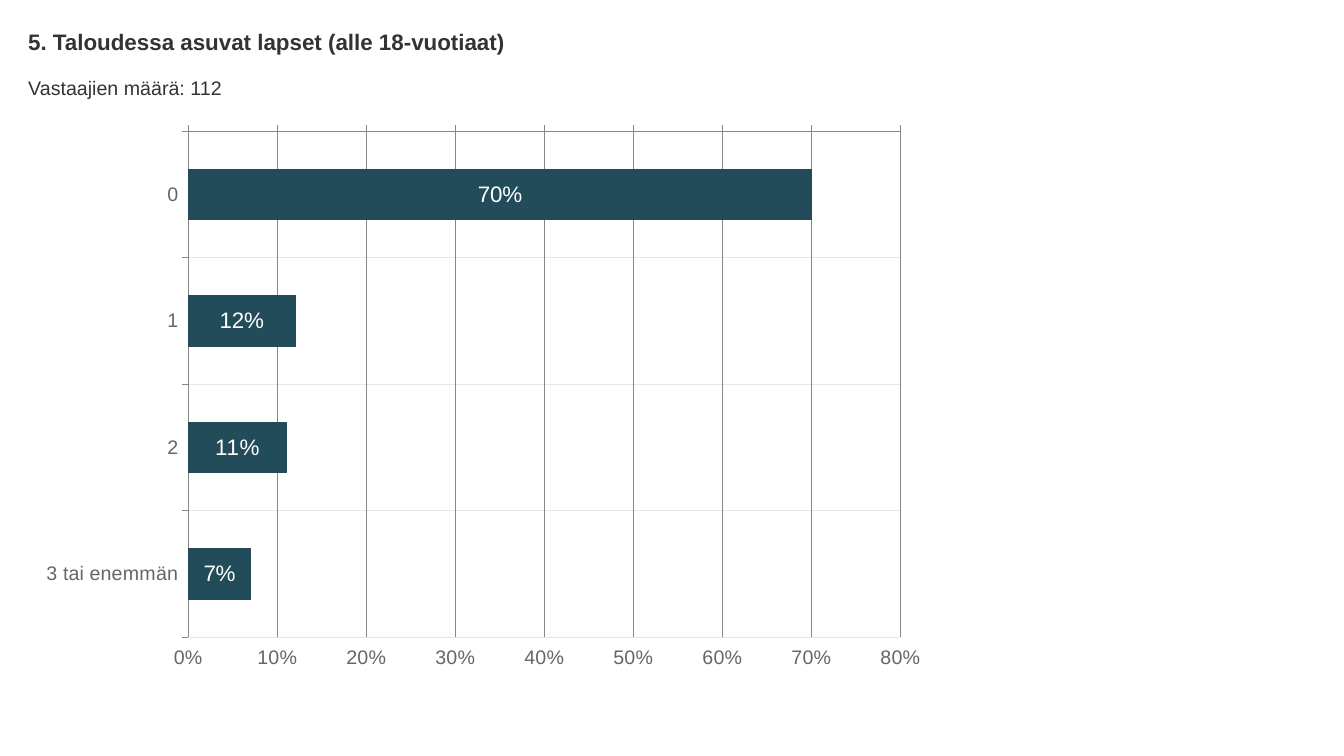
from dataclasses import dataclass

from pptx import Presentation
from pptx import util as u
from pptx.chart import data as chart_data
from pptx.dml.color import RGBColor
from pptx.enum import chart as ch
from pptx.enum import text

WIDTH, HEIGHT = u.Inches(13.33), u.Inches(7.5)
FONT = "Arial"
INK = RGBColor(0x33, 0x33, 0x33)
AXIS_TEXT = RGBColor(0x66, 0x66, 0x66)
AXIS_LINE = RGBColor(0x86, 0x86, 0x86)
ROW_LINE = RGBColor(0xE6, 0xE6, 0xE6)
BAR = RGBColor(0x23, 0x4C, 0x5A)
WHITE = RGBColor(0xFF, 0xFF, 0xFF)

SHARES = {"0": 0.70, "1": 0.12, "2": 0.11, "3 tai enemmän": 0.07}


@dataclass(frozen=True)
class Box:
    """A rectangle in percent of the slide's width and height."""
    left: float
    top: float
    width: float
    height: float

    def emu(self) -> tuple[int, int, int, int]:
        return (int(WIDTH * self.left / 100), int(HEIGHT * self.top / 100),
                int(WIDTH * self.width / 100), int(HEIGHT * self.height / 100))


@dataclass(frozen=True)
class Heading:
    words: str
    box: Box
    size: int
    bold: bool


HEADINGS = [
    Heading("5. Taloudessa asuvat lapset (alle 18-vuotiaat)",
            Box(2.1, 3.73, 95.87, 3.6), 16, True),
    Heading("Vastaajien määrä: 112", Box(2.1, 10, 95.87, 3.07), 14, False),
]
CHART_BOX = Box(2.1, 15.87, 67.74, 74.13)


def style_font(font, size: int, color: RGBColor, bold: bool = False) -> None:
    font.name, font.size, font.bold = FONT, u.Pt(size), bold
    font.color.rgb = color


def style_line(line, color: RGBColor) -> None:
    line.color.rgb = color
    line.width = u.Pt(0.75)


def add_heading(slide, heading: Heading) -> None:
    tf = slide.shapes.add_textbox(*heading.box.emu()).text_frame
    tf.word_wrap = True
    tf.auto_size = text.MSO_AUTO_SIZE.SHAPE_TO_FIT_TEXT
    tf.margin_left = tf.margin_top = tf.margin_right = tf.margin_bottom = 0
    r = tf.paragraphs[0].add_run()
    r.text = heading.words
    style_font(r.font, heading.size, INK, heading.bold)


def style_axis(axis, labels: ch.XL_TICK_LABEL_POSITION, grid: RGBColor) -> None:
    axis.has_major_gridlines = True
    style_line(axis.major_gridlines.format.line, grid)
    style_line(axis.format.line, AXIS_LINE)
    axis.major_tick_mark = ch.XL_TICK_MARK.OUTSIDE
    axis.minor_tick_mark = ch.XL_TICK_MARK.NONE
    axis.tick_label_position = labels
    style_font(axis.tick_labels.font, 14, AXIS_TEXT)


def add_share_chart(slide, box: Box, shares: dict[str, float]) -> None:
    data = chart_data.CategoryChartData(number_format="0%")
    data.categories = list(shares)
    data.add_series("Series 1", list(shares.values()))
    chart = slide.shapes.add_chart(
        ch.XL_CHART_TYPE.BAR_CLUSTERED, *box.emu(), data).chart
    chart.has_legend = chart.has_title = False
    style_font(chart.font, 14, AXIS_TEXT)

    style_axis(chart.category_axis, ch.XL_TICK_LABEL_POSITION.LOW, ROW_LINE)
    chart.category_axis.reverse_order = True

    # The reversed categories put this axis on top; HIGH keeps labels below.
    values = chart.value_axis
    style_axis(values, ch.XL_TICK_LABEL_POSITION.HIGH, AXIS_LINE)
    values.minimum_scale, values.maximum_scale = 0, 0.8
    values.major_unit = 0.1
    values.tick_labels.number_format = "0%"
    values.tick_labels.number_format_is_linked = False

    plot = chart.plots[0]
    plot.gap_width = 150
    plot.vary_by_categories = False
    bars = plot.series[0]
    bars.format.fill.solid()
    bars.format.fill.fore_color.rgb = BAR
    style_line(bars.format.line, BAR)

    labels = bars.data_labels
    labels.show_value = True
    labels.number_format = "0%"
    labels.number_format_is_linked = False
    labels.position = ch.XL_LABEL_POSITION.CENTER
    style_font(labels.font, 16, WHITE)


def main() -> None:
    prs = Presentation()
    prs.slide_width, prs.slide_height = WIDTH, HEIGHT
    slide = prs.slides.add_slide(prs.slide_layouts[6])
    for heading in HEADINGS:
        add_heading(slide, heading)
    add_share_chart(slide, CHART_BOX, SHARES)
    prs.save("out.pptx")


if __name__ == "__main__":
    main()
